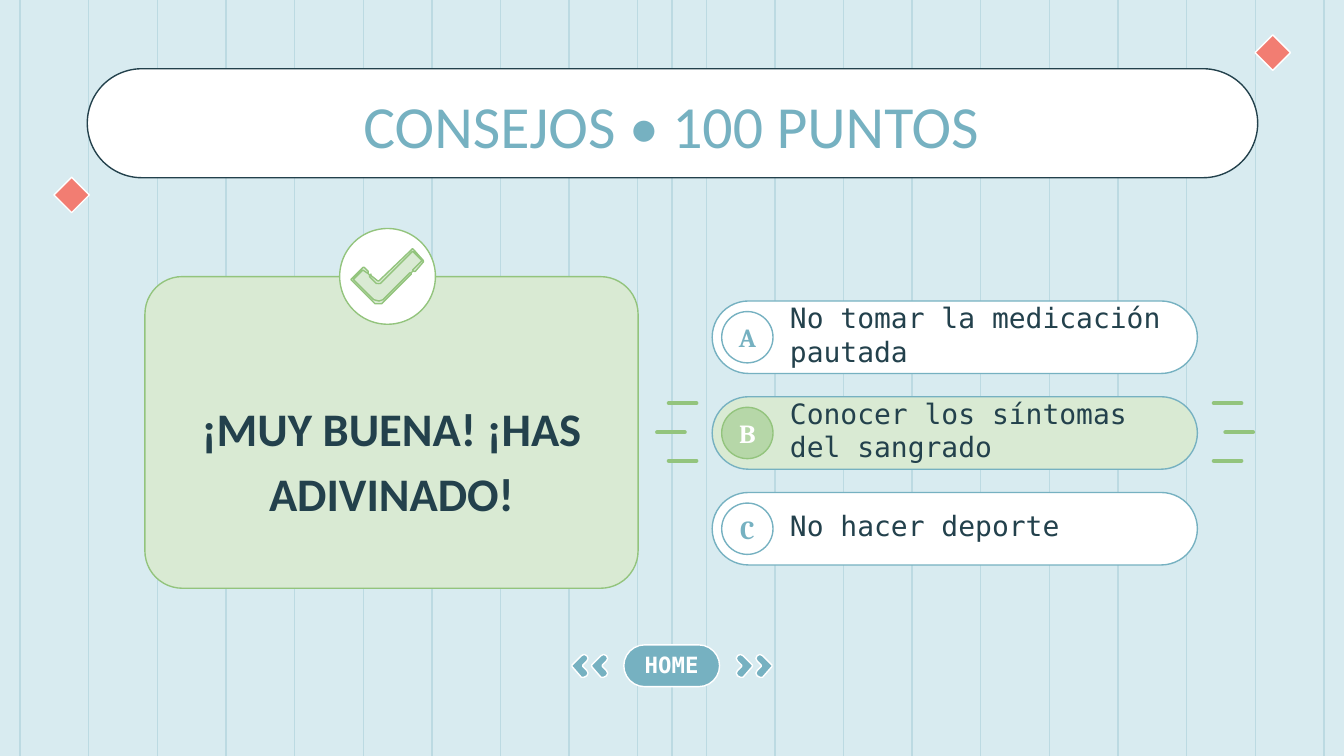
import dataclasses

import lxml.etree
import pptx
import pptx.dml.color
import pptx.enum.shapes
import pptx.enum.text
import pptx.oxml.ns
import pptx.util

Cm = pptx.util.Cm
Pt = pptx.util.Pt
SHAPE = pptx.enum.shapes.MSO_SHAPE
ANCHOR = pptx.enum.text.MSO_ANCHOR
ALIGN = pptx.enum.text.PP_ALIGN

WIDTH, HEIGHT = 25.4, 14.29
OUTLINE_SCALE = Cm(2.54) / 100  # one outline unit is a hundredth of an inch

# Outlines in units, measured from the top left of each icon
CHEVRON = [(4, 0), (2, 1), (1, 3), (2, 5), (5, 8), (5, 9), (2, 12), (1, 14),
           (2, 16), (4, 17), (6, 17), (13, 9), (13, 8), (6, 1)]
CHECK_BODY = [(46, 1), (22, 25), (21, 26), (20, 25), (9, 15), (1, 23),
              (17, 38), (19, 40), (21, 40), (23, 40), (25, 38), (54, 9)]
CHECK_LOWER_RIM = [(9, 14), (1, 22), (0, 23), (1, 24), (16, 39), (18, 41),
                   (21, 41), (23, 41), (25, 39), (45, 19), (45, 18), (44, 18),
                   (24, 38), (21, 39), (17, 38), (2, 23), (9, 16), (12, 18),
                   (13, 18), (13, 17), (10, 14)]
CHECK_UPPER_RIM = [(46, 0), (45, 1), (21, 24), (20, 24), (15, 20), (15, 19),
                   (14, 20), (14, 21), (19, 26), (21, 26), (22, 26), (46, 2),
                   (53, 9), (46, 16), (47, 17), (48, 17), (54, 10), (54, 9),
                   (47, 1)]


@dataclasses.dataclass(frozen=True)
class Theme:
    background: str = "D8EBF0"
    stripe: str = "BCDAE2"
    white: str = "FFFFFF"
    dark: str = "23414C"
    blue: str = "76B1C1"
    coral: str = "F27D72"
    pale_green: str = "D9EAD3"
    soft_green: str = "B6D7A8"
    green: str = "93C47D"
    heading_font: str = "Calibri"
    letter_font: str = "Cambria"
    body_font: str = "DejaVu Sans Mono"
    title_size: float = 32
    card_size: float = 25
    answer_size: float = 15
    letter_size: float = 14
    button_size: float = 12
    thin: float = 0.75
    thick: float = 2.25


THEME = Theme()


def rgb(value):
    return pptx.dml.color.RGBColor.from_string(value)


def paint(shape, fill, line):
    shape.shadow.inherit = False
    shape.fill.solid()
    shape.fill.fore_color.rgb = rgb(fill)
    shape.line.color.rgb = rgb(line)
    shape.line.width = Pt(THEME.thin)


def add_box(slide, kind, left, top, width, height, fill, line, rounding=None):
    box = slide.shapes.add_shape(kind, Cm(left), Cm(top), Cm(width), Cm(height))
    paint(box, fill, line)
    if rounding is not None:
        box.adjustments[0] = rounding
    return box


def write(box, text, font, size, color, insets, bold=False,
          align=ALIGN.CENTER, anchor=ANCHOR.MIDDLE, spacing=None):
    frame = box.text_frame
    frame.text = text
    frame.word_wrap = True
    frame.auto_size = pptx.enum.text.MSO_AUTO_SIZE.NONE
    frame.vertical_anchor = anchor
    (frame.margin_left, frame.margin_top,
     frame.margin_right, frame.margin_bottom) = map(Cm, insets)
    para = frame.paragraphs[0]
    para.alignment = align
    if spacing:
        para.line_spacing = spacing
    span = para.runs[0].font
    span.name, span.size, span.bold = font, Pt(size), bold
    span.color.rgb = rgb(color)


def add_line(slide, start, end, color, width, rounded=False):
    line = slide.shapes.add_connector(
        pptx.enum.shapes.MSO_CONNECTOR.STRAIGHT, *map(Cm, start + end))
    line.line.color.rgb = rgb(color)
    line.line.width = Pt(width)
    if rounded:
        line.line._get_or_add_ln().set("cap", "rnd")
    lxml.etree.SubElement(line.element.spPr, pptx.oxml.ns.qn("a:effectLst"))


def add_outline(slide, points, left, top, fill, line):
    builder = slide.shapes.build_freeform(*points[0], scale=OUTLINE_SCALE)
    builder.add_line_segments(points[1:], close=True)
    paint(builder.convert_to_shape(Cm(left), Cm(top)), fill, line)


def add_backdrop(slide):
    slide.background.fill.solid()
    slide.background.fill.fore_color.rgb = rgb(THEME.background)
    margin, count = 0.38, 20
    step = (WIDTH - 2 * margin) / (count - 1)
    for x in [WIDTH / 2] + [margin + step * index for index in range(count)]:
        add_line(slide, (x, 0), (x, HEIGHT), THEME.stripe, THEME.thin)


def add_title(slide, text):
    add_box(slide, SHAPE.ROUNDED_RECTANGLE, 1.65, 1.3, 22.12, 2.06,
            THEME.white, THEME.dark, 0.5)
    for left, top in [(1.02, 3.35), (23.72, 0.66)]:
        add_box(slide, SHAPE.DIAMOND, left, top, 0.67, 0.67,
                THEME.coral, THEME.white)
    title = slide.shapes.title
    title.left, title.top, title.width, title.height = map(
        Cm, (3.33, 1.42, 18.72, 1.65))
    write(title, text, THEME.heading_font, THEME.title_size, THEME.blue,
          (0.25, 0.25, 0.25, 0.25), anchor=ANCHOR.TOP)
    slide.shapes.element.append(title.element)  # in front of its panel


def add_card(slide, text):
    card = add_box(slide, SHAPE.ROUNDED_RECTANGLE, 2.74, 5.23, 9.32, 5.89,
                   THEME.pale_green, THEME.green, 0.12)
    write(card, text, THEME.heading_font, THEME.card_size, THEME.dark,
          (0.76, 1.14, 0.76, 0.25), bold=True, spacing=1.15)
    add_box(slide, SHAPE.OVAL, 6.42, 4.32, 1.81, 1.81, THEME.white, THEME.green)
    for points in (CHECK_BODY, CHECK_LOWER_RIM, CHECK_UPPER_RIM):
        add_outline(slide, points, 6.63, 4.7, THEME.pale_green, THEME.green)


def add_answer(slide, index, letter, text, correct):
    height, dot = 1.37, 0.97
    top = 5.69 + 1.81 * index
    pill = add_box(slide, SHAPE.ROUNDED_RECTANGLE, 13.46, top, 9.17, height,
                   THEME.pale_green if correct else THEME.white, THEME.blue, 0.5)
    write(pill, text, THEME.body_font, THEME.answer_size, THEME.dark,
          (1.27, 0.13, 0.25, 0.25), align=ALIGN.LEFT)
    badge = add_box(slide, SHAPE.OVAL, 13.64, top + (height - dot) / 2, dot, dot,
                    THEME.soft_green if correct else THEME.white,
                    THEME.green if correct else THEME.blue)
    write(badge, letter, THEME.letter_font, THEME.letter_size,
          THEME.white if correct else THEME.blue, (0, 0.25, 0, 0.25), bold=True)


def add_sparks(slide):
    for outer, inner in [(12.42, 12.64), (23.16, 22.94)]:
        for x, y in [(inner, 7.62), (outer, 8.17), (inner, 8.71)]:
            add_line(slide, (x, y), (x + 0.52, y), THEME.green, THEME.thick,
                     rounded=True)


def add_navigation(slide):
    home = add_box(slide, SHAPE.ROUNDED_RECTANGLE, 11.79, 12.19, 1.81, 0.79,
                   THEME.blue, THEME.white, 0.5)
    write(home, "HOME", THEME.body_font, THEME.button_size, THEME.white,
          (0.25, 0.2, 0.25, 0.25), bold=True)
    mirrored = [(-x, y) for x, y in CHEVRON]
    for left in (13.89, 14.26):
        add_outline(slide, CHEVRON, left, 12.37, THEME.blue, THEME.white)
        add_outline(slide, mirrored, WIDTH - left, 12.37, THEME.blue, THEME.white)


def main():
    deck = pptx.Presentation()
    deck.slide_width, deck.slide_height = Cm(WIDTH), Cm(HEIGHT)
    slide = deck.slides.add_slide(deck.slide_layouts.get_by_name("Title Only"))

    # Backdrop and heading
    add_backdrop(slide)
    add_title(slide, "CONSEJOS • 100 PUNTOS")

    # Verdict and answers
    add_card(slide, "¡MUY BUENA! ¡HAS ADIVINADO!")
    answers = [("A", "No tomar la medicación pautada", False),
               ("B", "Conocer los síntomas del sangrado", True),
               ("C", "No hacer deporte", False)]
    for index, answer in enumerate(answers):
        add_answer(slide, index, *answer)
    add_sparks(slide)

    # Navigation
    add_navigation(slide)
    deck.save("out.pptx")


if __name__ == "__main__":
    main()
